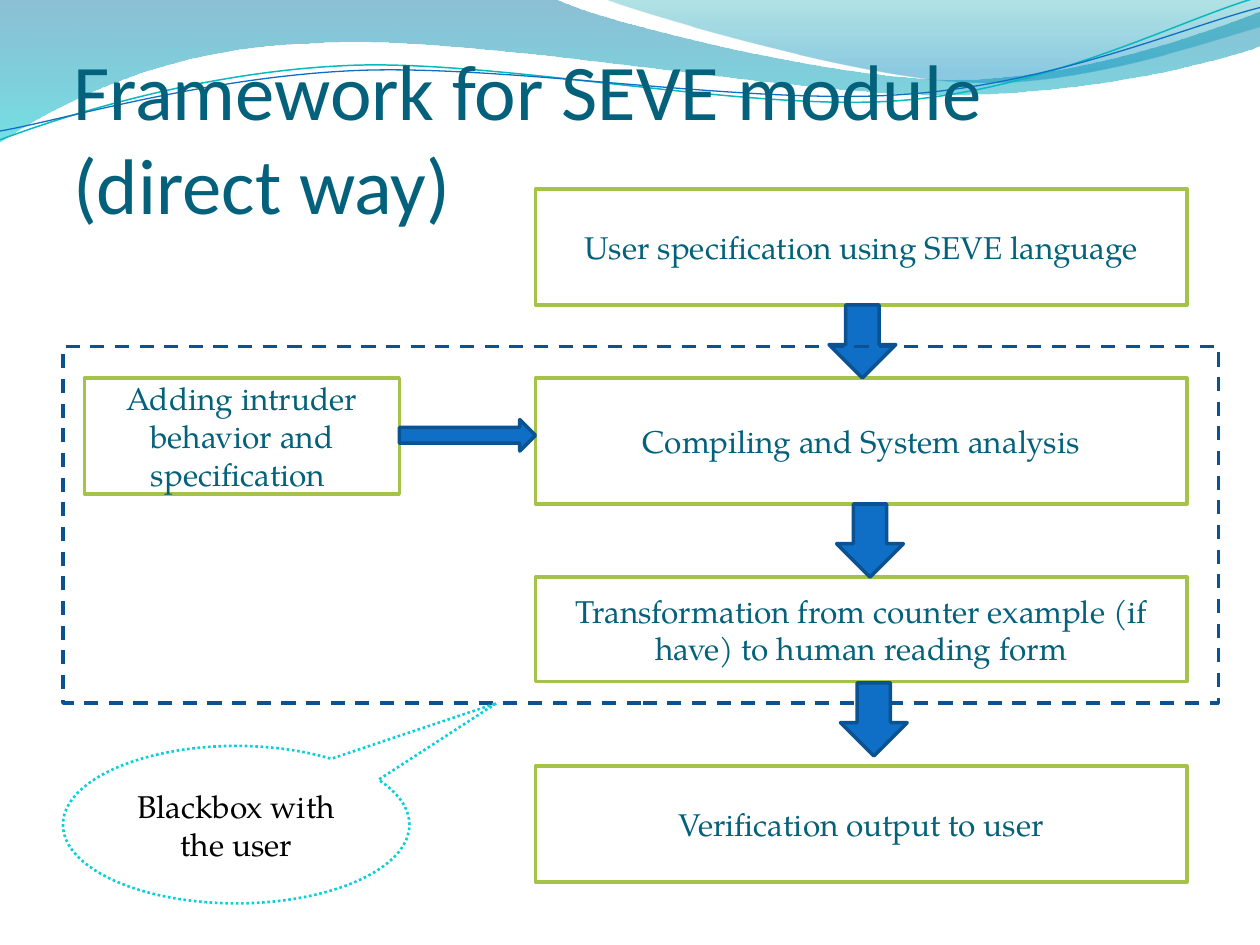
from lxml.etree import SubElement
from pptx import Presentation
from pptx.dml.color import RGBColor
from pptx.enum.dml import MSO_LINE_DASH_STYLE as Dash
from pptx.enum.shapes import MSO_SHAPE as Shape
from pptx.enum.text import MSO_ANCHOR as Anchor, PP_ALIGN as Align
from pptx.oxml.ns import qn
from pptx.util import Inches, Pt

THEME = {
    "heading_font": "Calibri", "body_font": "TeX Gyre Pagella",
    "heading_size": 45, "body_size": 18,
    "ink": "04617B", "black": "000000", "white": "FFFFFF",
    "box_line": "A5C249", "arrow": "0F6FC6", "dark_blue": "0B5292",
    "callout": "0BD0D9", "teal_line": "0AB8BF",
    "deep_blue": "0074A1", "cyan": "00C6CF", "sea": "00A1A9", "sky": "008BBF",
}

TITLE = "Framework for SEVE module \v(direct way)"
COLUMN_LEFT, COLUMN_WIDTH = 4.25, 5.17
BOXES = [
    ("User specification using SEVE language", COLUMN_LEFT, 1.5, COLUMN_WIDTH, 0.92),
    ("Compiling and System analysis", COLUMN_LEFT, 3, COLUMN_WIDTH, 1),
    ("Adding intruder behavior and specification ", 0.67, 3, 2.5, 0.92),
    ("Transformation from counter example (if have) to human reading form",
     COLUMN_LEFT, 4.58, COLUMN_WIDTH, 0.83),
    ("Verification output to user", COLUMN_LEFT, 6.08, COLUMN_WIDTH, 0.92),
]
INNER_ARROWS = [
    (Shape.DOWN_ARROW, (6.58, 2.42, 0.53, 0.58)),
    (Shape.DOWN_ARROW, (6.64, 4, 0.53, 0.58)),
    (Shape.RIGHT_ARROW, (3.17, 3.33, 1.08, 0.25)),
]
OUTPUT_ARROW = (Shape.DOWN_ARROW, (6.67, 5.42, 0.53, 0.58))
BLACKBOX = (0.5, 2.75, 9.17, 2.83)
CALLOUT = ("Blackbox with the user", 0.5, 5.92, 2.75, 1.25)
CALLOUT_TIP = (0.75, -0.77)

WAVES = [
    ([(0, 0), (4.4, -0.01),
      (4.76, 0.17, 6.64, 0.63, 7.58, 0.63), (8.53, 0.63, 9.58, 0.26, 10, 0.09),
      (10.01, 0.36),
      (9.83, 0.44, 8.7, 0.76, 7.46, 0.75), (6.22, 0.75, 3.82, 0.28, 2.57, 0.34),
      (1.29, 0.36, 0.46, 0.83, -0.01, 1.13), (0, 0)],
     [(0, "deep_blue", 45), (1, "cyan", 55)]),
    ([(4.79, -0.01),
      (5.09, 0.11, 6.82, 0.62, 7.69, 0.65), (8.56, 0.69, 9.61, 0.32, 10, 0.21),
      (10, 0), (4.79, -0.01)],
     [(0, "sea", 30), (0.8, "sky", 45)]),
]
RIPPLES = [
    ([(0, 1.11), (0.48, 0.93, 1.58, 0.57, 2.77, 0.52),
      (3.95, 0.47, 5.93, 0.89, 7.13, 0.8), (8.33, 0.71, 9.38, 0.15, 9.98, -0.02)],
     "teal_line", 0.85),
    ([(0, 1.04), (0.47, 0.96, 1.64, 0.61, 2.83, 0.56),
      (4.03, 0.51, 5.97, 0.84, 7.17, 0.75), (8.36, 0.67, 9.41, 0.21, 10, 0.06)],
     "arrow", 0.75),
]


def color(name):
    return RGBColor.from_string(THEME[name])


def add_outline(slide, segments, close):
    points = [(Inches(segment[i]), Inches(segment[i + 1]))
              for segment in segments for i in range(0, len(segment), 2)]
    builder = slide.shapes.build_freeform(*points[0])
    builder.add_line_segments(points[1:], close=close)
    shape = builder.convert_to_shape()
    shape.shadow.inherit = False
    lines = iter(list(shape.element.iter(qn("a:lnTo"))))
    for segment in segments[1:]:
        line = next(lines)
        if len(segment) == 6:
            outline = line.getparent()
            curve = SubElement(outline, qn("a:cubicBezTo"))
            outline.replace(line, curve)
            curve.append(line[0])
            for _ in range(2):
                control = next(lines)
                curve.append(control[0])
                outline.remove(control)
    return shape


def add_wave(slide, segments, stops):
    shape = add_outline(slide, segments, True)
    shape.line.fill.background()
    shape.fill.gradient()
    shape.fill.gradient_angle = 270
    for stop, (position, name, _) in zip(shape.fill.gradient_stops, stops):
        stop.position = position
        stop.color.rgb = color(name)
    for element, (*_, opacity) in zip(shape.element.iter(qn("a:srgbClr")), stops):
        SubElement(element, qn("a:alpha"), val=str(opacity * 1000))


def add_ripple(slide, segments, line, width):
    shape = add_outline(slide, segments, False)
    shape.fill.background()
    shape.line.color.rgb = color(line)
    shape.line.width = Pt(width)


def add_shape(slide, kind, place, fill, line, width=2, dash=None):
    shape = slide.shapes.add_shape(kind, *map(Inches, place))
    shape.shadow.inherit = False
    if fill:
        shape.fill.solid()
        shape.fill.fore_color.rgb = color(fill)
    else:
        shape.fill.background()
    shape.line.color.rgb = color(line)
    shape.line.width = Pt(width)
    if dash:
        shape.line.dash_style = dash
    return shape


def write(shape, text, role, ink, align, anchor):
    frame = shape.text_frame
    frame.text = text
    frame.word_wrap = True
    frame.vertical_anchor = anchor
    for paragraph in frame.paragraphs:
        paragraph.alignment = align
        for run in paragraph.runs:
            run.font.name = THEME[role + "_font"]
            run.font.size = Pt(THEME[role + "_size"])
            run.font.color.rgb = color(ink)


def add_title(slide):
    title = slide.shapes.add_textbox(*map(Inches, (0.58, 0.58, 9, 1.25)))
    write(title, TITLE, "heading", "ink", Align.LEFT, Anchor.BOTTOM)
    frame = title.text_frame
    frame.margin_left = frame.margin_right = frame.margin_bottom = 0


def add_callout(slide):
    text, *place = CALLOUT
    callout = add_shape(slide, Shape.OVAL_CALLOUT, place, "white", "callout",
                        1.5, Dash.ROUND_DOT)
    for index, offset in enumerate(CALLOUT_TIP):
        callout.adjustments[index] = offset
    write(callout, text, "body", "black", Align.CENTER, Anchor.MIDDLE)


def main():
    """Build the SEVE framework slide."""
    presentation = Presentation()
    presentation.slide_width, presentation.slide_height = Inches(10), Inches(7.5)
    slide = presentation.slides.add_slide(presentation.slide_layouts[6])

    for wave in WAVES:
        add_wave(slide, *wave)
    for ripple in RIPPLES:
        add_ripple(slide, *ripple)
    add_title(slide)
    for text, *place in BOXES:
        box = add_shape(slide, Shape.RECTANGLE, place, "white", "box_line")
        write(box, text, "body", "ink", Align.CENTER, Anchor.MIDDLE)
    for arrow in INNER_ARROWS:
        add_shape(slide, *arrow, "arrow", "dark_blue")
    add_shape(slide, Shape.RECTANGLE, BLACKBOX, None, "dark_blue", dash=Dash.DASH)
    add_shape(slide, *OUTPUT_ARROW, "arrow", "dark_blue")
    add_callout(slide)
    presentation.save("out.pptx")


if __name__ == "__main__":
    main()
